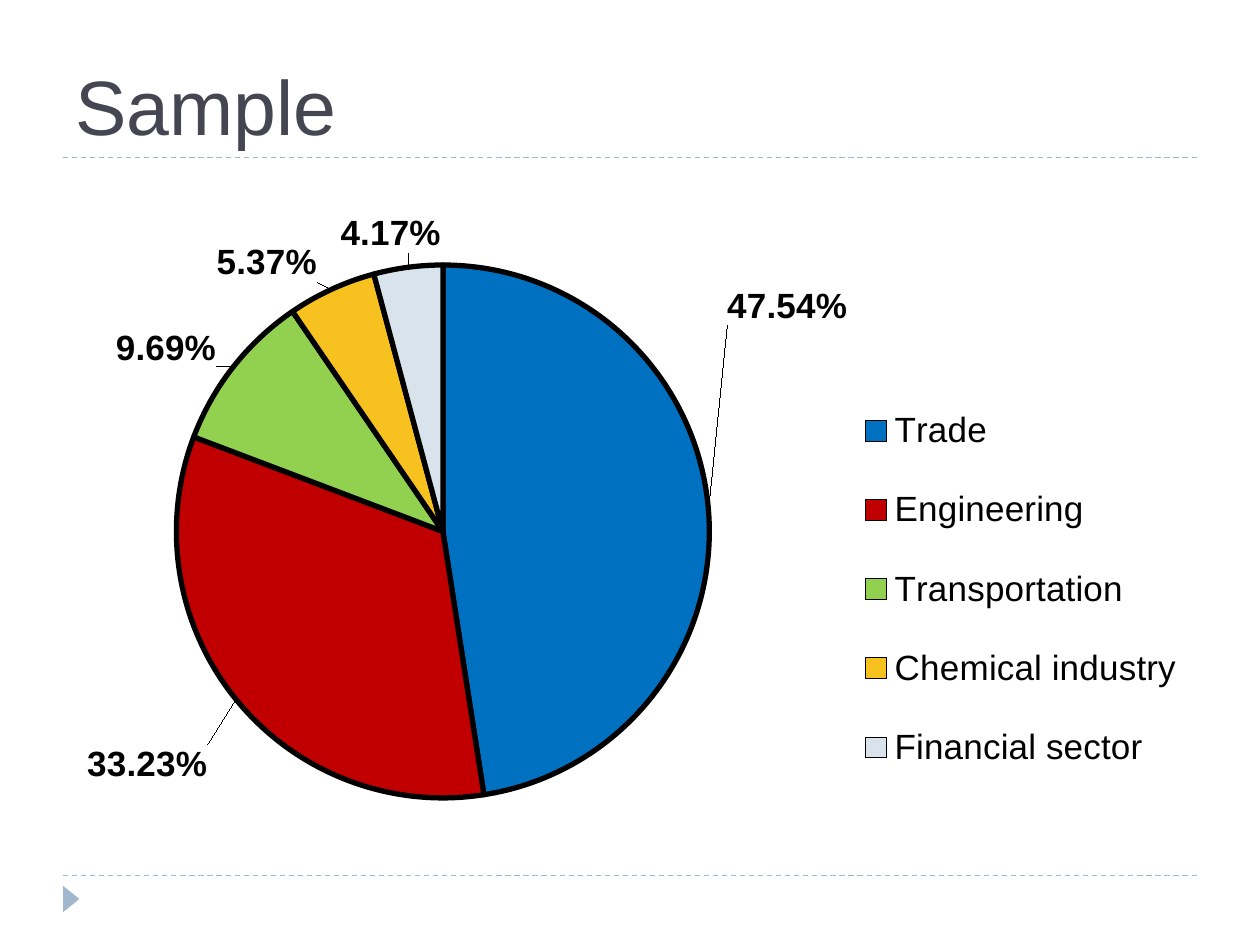
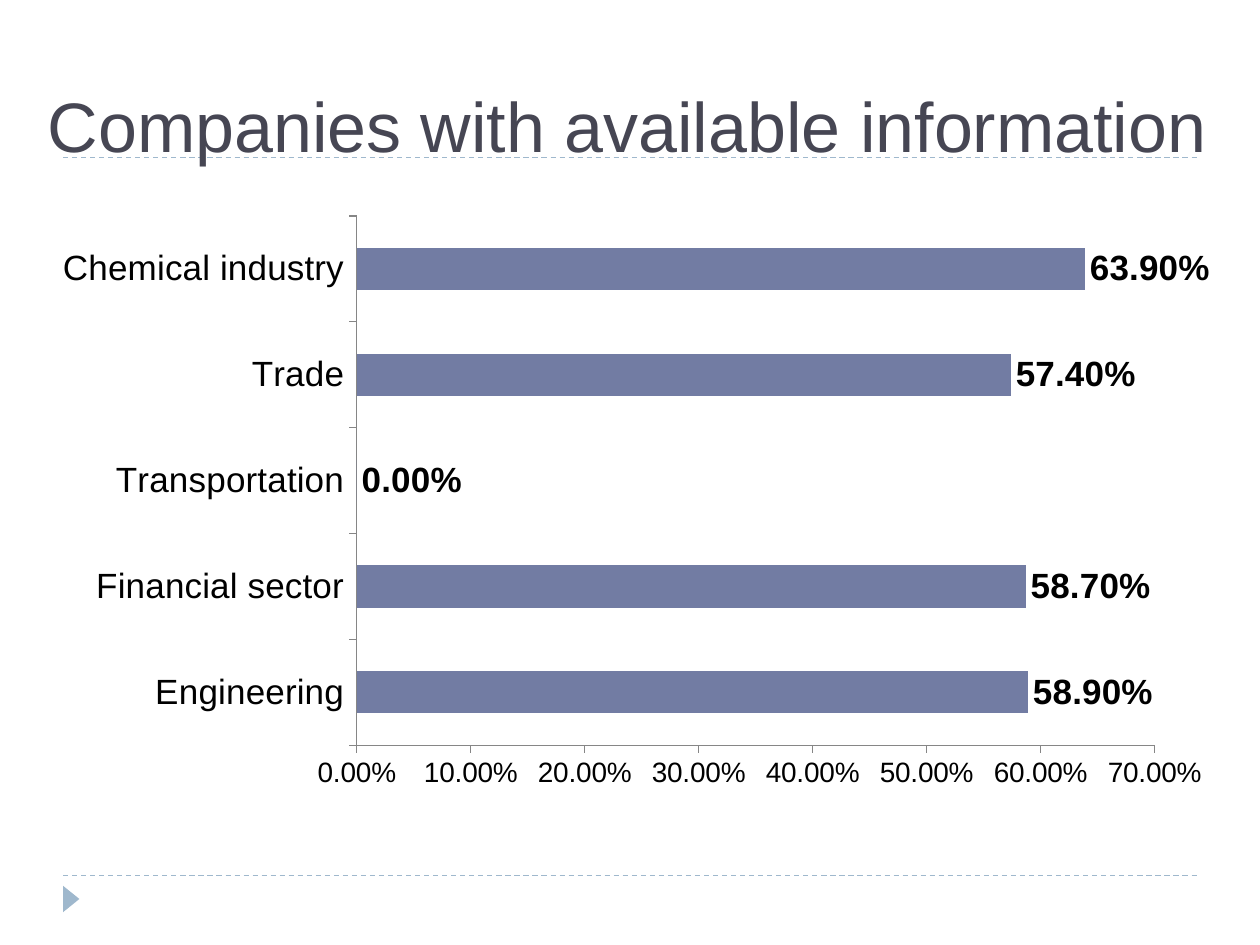
from lxml.etree import Element, SubElement
from pptx import Presentation
from pptx.chart.data import CategoryChartData
from pptx.dml.color import RGBColor
from pptx.enum.chart import XL_CHART_TYPE, XL_LABEL_POSITION, XL_LEGEND_POSITION, XL_TICK_MARK
from pptx.enum.dml import MSO_LINE
from pptx.enum.shapes import MSO_CONNECTOR, MSO_SHAPE
from pptx.enum.text import MSO_ANCHOR
from pptx.oxml.ns import qn
from pptx.util import Pt

PX = 9144
FONT = "Arial"
COLORS = {
    "title": "464653",
    "accent": "9FB8CD",
    "text": "000000",
    "axis": "868686",
    "bar": "727CA3",
    "Trade": "0070C0",
    "Engineering": "C00000",
    "Transportation": "92D050",
    "Chemical industry": "F7C120",
    "Financial sector": "D9E3EB",
}
RGB = {name: RGBColor.from_string(value) for name, value in COLORS.items()}


def add_text(s, text, x, y, w, h, size=44, color="title", anchor=MSO_ANCHOR.BOTTOM):
    tf = s.shapes.add_textbox(x * PX, y * PX, w * PX, h * PX).text_frame
    tf.word_wrap = True
    tf.vertical_anchor = anchor
    r = tf.paragraphs[0].add_run()
    r.text = text
    r.font.name = FONT
    r.font.size = Pt(size)
    r.font.color.rgb = RGB[color]


def set_layout(parent, index, **values):
    for old in parent.findall(qn("c:layout")):
        parent.remove(old)
    layout = Element(qn("c:layout"))
    manual = SubElement(layout, qn("c:manualLayout"))
    for tag, value in values.items():
        SubElement(manual, qn(f"c:{tag}"), val=str(value))
    parent.insert(index, layout)


prs = Presentation()
prs.slide_width = 1000 * PX
prs.slide_height = 750 * PX

slides = []
for title, box, size in [
    ("Sample", (50, 17, 900, 108), 44),
    ("Companies with available information", (28, 29, 972, 108), 40),
]:
    s = prs.slides.add_slide(prs.slide_layouts[6])
    for y in (695, 125):
        rule = s.shapes.add_connector(MSO_CONNECTOR.STRAIGHT, 50 * PX, y * PX, 950 * PX, y * PX)
        rule.line.color.rgb = RGB["accent"]
        rule.line.width = Pt(0.75)
        rule.line.dash_style = MSO_LINE.DASH
        SubElement(rule.element.spPr, qn("a:effectLst"))
    sp = s.shapes.add_shape(MSO_SHAPE.ISOSCELES_TRIANGLE, 46 * PX, 707 * PX, 21 * PX, 13 * PX)
    sp.rotation = 90
    sp.shadow.inherit = False
    sp.fill.solid()
    sp.fill.fore_color.rgb = RGB["accent"]
    sp.line.fill.background()
    add_text(s, title, *box, size=size)
    slides.append(s)

charts = []
for s, kind, box, values in [
    (slides[0], XL_CHART_TYPE.PIE, (50, 133, 900, 540),
     {"Trade": 47.54, "Engineering": 33.23, "Transportation": 9.69,
      "Chemical industry": 5.37, "Financial sector": 4.17}),
    (slides[1], XL_CHART_TYPE.BAR_CLUSTERED, (28, 162, 945, 472),
     {"Engineering": 0.589, "Financial sector": 0.587, "Transportation": 0,
      "Trade": 0.574, "Chemical industry": 0.639}),
]:
    data = CategoryChartData()
    data.categories = list(values)
    data.add_series("Series 1", list(values.values()))
    chart = s.shapes.add_chart(kind, *(v * PX for v in box), data).chart
    chart.has_title = False
    chart.has_legend = False
    chart.font.name = FONT
    chart.font.size = Pt(20)
    chart.font.color.rgb = RGB["text"]
    labels = chart.plots[0].series[0].data_labels
    labels.number_format = "0.00%"
    labels.number_format_is_linked = False
    labels.position = XL_LABEL_POSITION.OUTSIDE_END
    labels.font.name = FONT
    labels.font.size = Pt(20)
    labels.font.bold = True
    labels.font.color.rgb = RGB["text"]
    charts.append(chart)

pie, bars = charts

pie.plots[0].vary_by_categories = True
series = pie.plots[0].series[0]
series.data_labels.show_value = False
series.data_labels.show_percentage = True
for i, sector in enumerate(pie.plots[0].categories):
    point = series.points[i]
    point.format.fill.solid()
    point.format.fill.fore_color.rgb = RGB[sector]
    point.format.line.color.rgb = RGB["text"]
    point.format.line.width = Pt(3)
    label = point.data_label
    label.position = XL_LABEL_POSITION.OUTSIDE_END
    label.font.name = FONT
    label.font.size = Pt(20)
    label.font.bold = True
    label.font.color.rgb = RGB["text"]
offsets = [(0.01, -0.3), (-0.02, 0.06), (-0.01, 0.01), (-0.01, 0), (0.03, -0.01)]
for label, (x, y) in zip(pie.element.iter(qn("c:dLbl")), offsets):
    set_layout(label, 1, x=x, y=y)
    number_format = Element(qn("c:numFmt"), formatCode="0.00%", sourceLinked="0")
    label.insert(2, number_format)
    label.find(qn("c:showVal")).set("val", "0")
    label.find(qn("c:showPercent")).set("val", "1")

pie.has_legend = True
pie.legend.position = XL_LEGEND_POSITION.RIGHT
pie.legend.include_in_layout = False
pie.legend.font.name = FONT
pie.legend.font.size = Pt(20)
pie.legend.font.color.rgb = RGB["text"]
set_layout(next(pie.element.iter(qn("c:legend"))), 1,
           xMode="edge", yMode="edge", x=0.7, y=0.3, w=0.29, h=0.64)
set_layout(next(pie.element.iter(qn("c:plotArea"))), 0,
           layoutTarget="inner", xMode="edge", yMode="edge", x=0.1, y=0.14, w=0.47, h=0.79)

plot = bars.plots[0]
plot.vary_by_categories = False
plot.gap_width = 150
plot.series[0].format.fill.solid()
plot.series[0].format.fill.fore_color.rgb = RGB["bar"]
plot.series[0].data_labels.show_value = True
for axis, size in [(bars.category_axis, 20), (bars.value_axis, 16)]:
    axis.has_major_gridlines = False
    axis.major_tick_mark = XL_TICK_MARK.OUTSIDE
    axis.minor_tick_mark = XL_TICK_MARK.NONE
    axis.format.line.color.rgb = RGB["axis"]
    axis.format.line.width = Pt(0.75)
    axis.tick_labels.font.name = FONT
    axis.tick_labels.font.size = Pt(size)
    axis.tick_labels.font.color.rgb = RGB["text"]
bars.value_axis.minimum_scale = 0
bars.value_axis.maximum_scale = 0.7
bars.value_axis.major_unit = 0.1
bars.value_axis.tick_labels.number_format = "0.00%"
bars.value_axis.tick_labels.number_format_is_linked = False
set_layout(next(bars.element.iter(qn("c:plotArea"))), 0,
           layoutTarget="inner", xMode="edge", yMode="edge", x=0.27, y=0.02, w=0.67, h=0.89)

prs.save("out.pptx")
